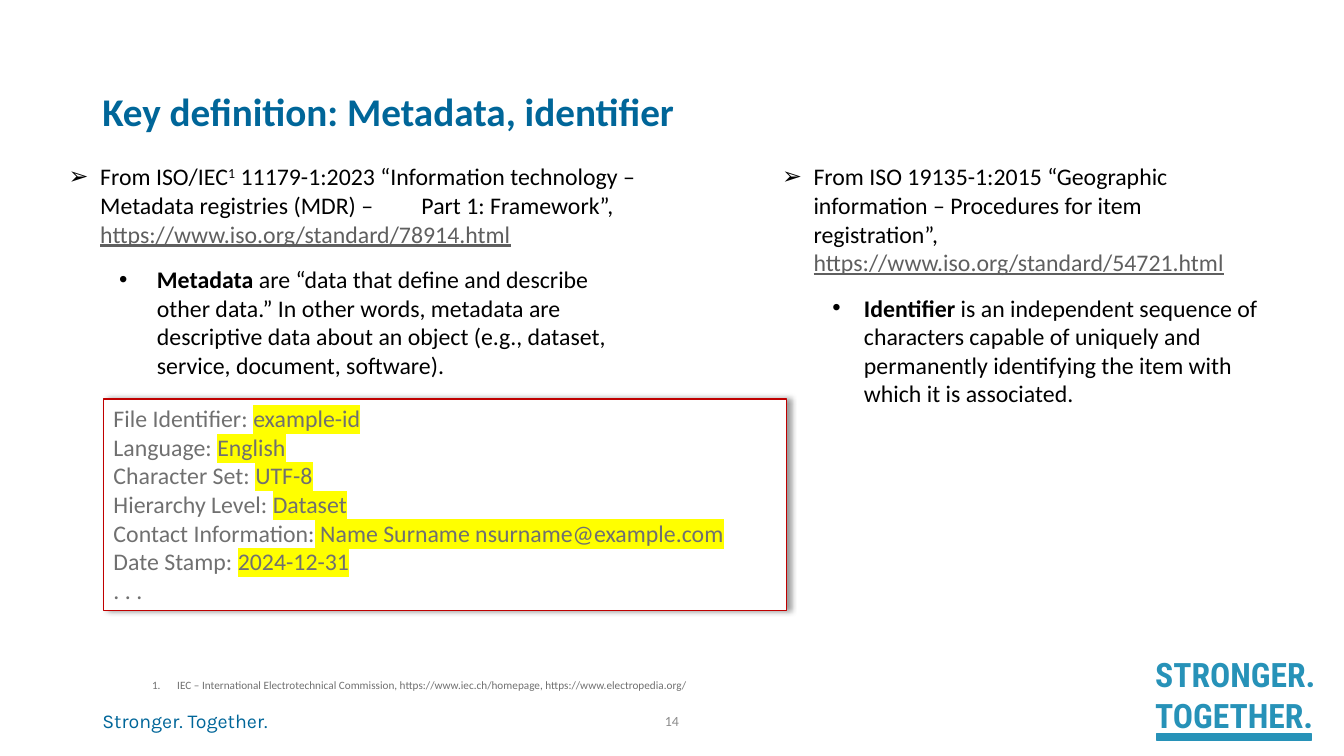
from lxml import etree
from pptx import Presentation
from pptx.dml.color import RGBColor
from pptx.enum.shapes import MSO_SHAPE
from pptx.enum.text import MSO_ANCHOR, PP_ALIGN
from pptx.oxml.ns import qn
from pptx.util import Pt

RECTANGLE = MSO_SHAPE.RECTANGLE
TOP, MIDDLE = MSO_ANCHOR.TOP, MSO_ANCHOR.MIDDLE
LEFT, CENTER = PP_ALIGN.LEFT, PP_ALIGN.CENTER

NAVY = RGBColor(0x00, 0x66, 0x99)
BLACK = RGBColor(0x00, 0x00, 0x00)
WHITE = RGBColor(0xFF, 0xFF, 0xFF)
GRAY = RGBColor(0x70, 0x70, 0x70)
PAGE_GRAY = RGBColor(0x8C, 0x8C, 0x8C)
LINK_GRAY = RGBColor(0x5F, 0x5F, 0x5F)
RED = RGBColor(0xC0, 0x00, 0x00)
TEAL = RGBColor(0x27, 0x92, 0xB8)
YELLOW = RGBColor(0xFF, 0xFF, 0x00)


def add_box(left, top, width, height, anchor=TOP):
    frame = slide.shapes.add_textbox(Pt(left), Pt(top), Pt(width), Pt(height)).text_frame
    frame.word_wrap = True
    frame.vertical_anchor = anchor
    return frame


def add_paragraph(frame, runs, size, color, font="Calibri", bullet=None, margin=0, hanging=0,
                  tab=None, **layout):
    """Fill the empty first paragraph or append one; each run is (text, format values)."""
    first = frame.paragraphs[0]
    paragraph = frame.add_paragraph() if first.runs else first
    for name, value in layout.items():
        setattr(paragraph, name, value)
    properties = paragraph._p.get_or_add_pPr()
    if bullet:
        properties.set("marL", str(Pt(margin)))
        properties.set("indent", str(-Pt(hanging)))
        if bullet == "1.":
            etree.SubElement(properties, qn("a:buAutoNum"), type="arabicPeriod")
        else:
            etree.SubElement(properties, qn("a:buFont"), typeface="Arial")
            etree.SubElement(properties, qn("a:buChar"), char=bullet)
    if tab:
        stops = etree.SubElement(properties, qn("a:tabLst"))
        etree.SubElement(stops, qn("a:tab"), pos=str(Pt(tab)), algn="l")
    for text, changes in runs:
        run = paragraph.add_run()
        run.text = text
        values = {"size": Pt(size), "name": font, **changes}
        run.font.color.rgb = values.pop("color", color)
        highlight = values.pop("highlight", None)
        baseline = values.pop("baseline", None)
        for name, value in values.items():
            setattr(run.font, name, value)
        if highlight:
            mark = etree.Element(qn("a:highlight"))
            etree.SubElement(mark, qn("a:srgbClr"), val=str(highlight))
            run._r.rPr.find(qn("a:solidFill")).addnext(mark)
        if baseline:
            run._r.rPr.set("baseline", str(baseline))


presentation = Presentation()
presentation.slide_width = Pt(960)
presentation.slide_height = Pt(540)
slide = presentation.slides.add_slide(presentation.slide_layouts[6])

BOLD = {"bold": True}
LINK = {"color": LINK_GRAY, "underline": True}

# Title, footer and page number
title = add_box(66, 28.8, 828, 104.4, MIDDLE)
add_paragraph(title, [("Key definition: Metadata, identifier", BOLD)], 28, NAVY,
              line_spacing=0.9)
footer = add_box(66, 502.5, 289.5, 24.5)
add_paragraph(footer, [("Stronger. Together.", {})], 14, NAVY, "Karla")
page_number = add_box(318, 500.4, 324, 28.8, MIDDLE)
add_paragraph(page_number, [("14", {})], 10, PAGE_GRAY, alignment=CENTER)

# Definitions: box, tab stop, source runs, definition indent, definition runs
definitions = [
    ((42, 112.3, 424, 163.4), 252,
     [("From ISO/IEC", {}), ("1", {"baseline": 30000}),
      (" 11179-1:2023 “Information technology – Metadata registries (MDR) –\tPart 1: Framework”, ", {}),
      ("https://www.iso.org/standard/78914.html", LINK)],
     (63, 27),
     [("Metadata ", BOLD),
      ("are “data that define and describe other data.” In other words, metadata are descriptive "
       "data about an object (e.g., dataset, service, document, software).", {})]),
    ((551.5, 112.3, 361, 184.3), None,
     [("From ISO 19135-1:2015 “Geographic information – Procedures for item registration”, ", {}),
      ("https://www.iso.org/standard/54721.html", LINK)],
     (58.5, 22.5),
     [("Identifier", BOLD),
      (" is an independent sequence of characters capable of uniquely and permanently identifying "
       "the item with which it is associated.", {})]),
]
for box, tab, source, (margin, hanging), definition in definitions:
    column = add_box(*box)
    add_paragraph(column, source, 17, BLACK, bullet="➢", margin=22.5, hanging=22.5, tab=tab)
    add_paragraph(column, definition, 17, BLACK, bullet="•", margin=margin, hanging=hanging,
                  level=1, space_before=Pt(12), space_after=Pt(8))

footnote = add_box(101.5, 481, 728.6, 17.3)
add_paragraph(footnote, [("IEC – International Electrotechnical Commission, "
                          "https://www.iec.ch/homepage, https://www.electropedia.org/", {})],
              8, GRAY, bullet="1.", margin=18, hanging=18)

# Metadata example
example = slide.shapes.add_shape(RECTANGLE, Pt(74), Pt(285), Pt(487.5), Pt(151))
example.fill.solid()
example.fill.fore_color.rgb = WHITE
example.line.color.rgb = RED
example.line.width = Pt(0.75)
example.shadow.inherit = False
shadow = etree.SubElement(example._element.spPr.find(qn("a:effectLst")), qn("a:outerShdw"),
                          blurRad=str(Pt(4)), dist=str(Pt(3)), dir="0", algn="l", rotWithShape="0")
shadow_color = etree.SubElement(shadow, qn("a:srgbClr"), val=str(BLACK))
etree.SubElement(shadow_color, qn("a:alpha"), val="40000")
example.text_frame.word_wrap = True
example.text_frame.vertical_anchor = TOP

metadata_fields = [
    ("File Identifier: ", "example-id"),
    ("Language: ", "English"),
    ("Character Set: ", "UTF-8"),
    ("Hierarchy Level: ", "Dataset"),
    ("Contact Information:", " Name Surname nsurname@example.com"),
    ("Date Stamp: ", "2024-12-31"),
]
for label, value in metadata_fields:
    add_paragraph(example.text_frame, [(label, {}), (value, {"highlight": YELLOW})], 17, GRAY,
                  alignment=LEFT)
add_paragraph(example.text_frame, [(". . .", {})], 17, GRAY, alignment=LEFT)

# Slogan
slogan = add_box(818, 463.7, 134, 76)
for word in ("STRONGER.", "TOGETHER."):
    add_paragraph(slogan, [(word, BOLD)], 24, TEAL, "Roboto Condensed")
underline = slide.shapes.add_shape(RECTANGLE, Pt(826), Pt(524.2), Pt(111), Pt(4.3))
underline.fill.solid()
underline.fill.fore_color.rgb = TEAL
underline.line.color.rgb = TEAL
underline.line.width = Pt(1)
underline.shadow.inherit = False

presentation.save("out.pptx")
